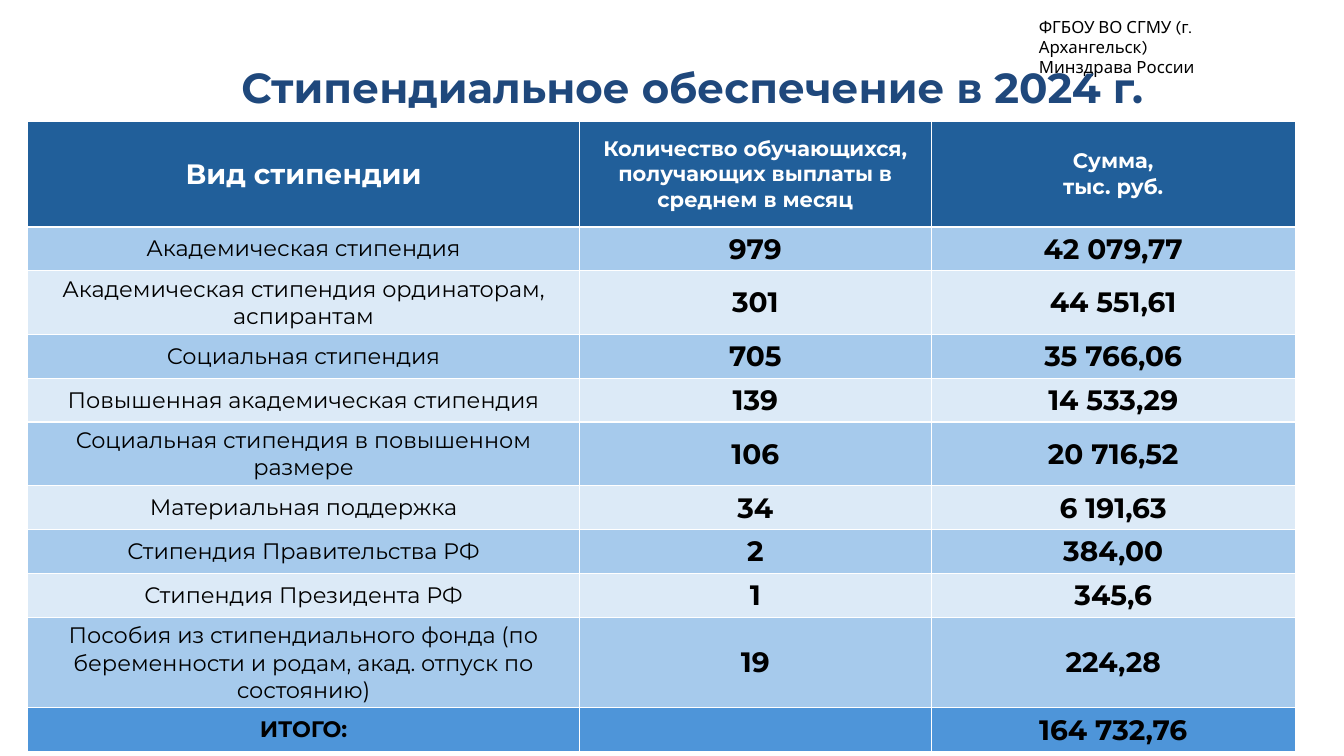
from pptx import Presentation
from pptx.dml.color import RGBColor
from pptx.enum.text import MSO_ANCHOR, PP_ALIGN
from pptx.util import Cm, Pt

LEFT = PP_ALIGN.LEFT
CENTER = PP_ALIGN.CENTER
MIDDLE = MSO_ANCHOR.MIDDLE

HEADINGS = [
    "Вид стипендии",
    "Количество обучающихся, получающих выплаты в среднем в месяц",
    "Сумма,\nтыс. руб.",
]
HEADING_SIZES = [20, 15, 15]
SCHOLARSHIPS = [
    ("Академическая стипендия", "979", "42 079,77"),
    ("Академическая стипендия ординаторам, аспирантам", "301", "44 551,61"),
    ("Социальная стипендия", "705", "35 766,06"),
    ("Повышенная академическая стипендия", "139", "14 533,29"),
    ("Социальная стипендия в повышенном размере", "106", "20 716,52"),
    ("Материальная поддержка", "34", "6 191,63"),
    ("Стипендия Правительства РФ", "2", "384,00"),
    ("Стипендия Президента РФ", "1", "345,6"),
    ("Пособия из стипендиального фонда (по беременности и родам, "
     "акад. отпуск по состоянию)", "19", "224,28"),
]
TOTAL = ("ИТОГО:", "", "164 732,76")

COLUMN_WIDTHS = [13.9, 8.87, 9.17]
HEADING_HEIGHT = 2.67
LINE_HEIGHTS = {1: 1.04, 2: 1.55, 3: 2.18}
LINE_COUNTS = [1, 2, 1, 1, 2, 1, 1, 1, 3, 1]
BANDS = ["A6CAEC", "DCEAF7"]


def color(value):
    return RGBColor.from_string(value)


def write(frame, text, size, font="Montserrat", fill="000000", bold=False,
          align=CENTER, spacing=None):
    frame.text = text
    for paragraph in frame.paragraphs:
        paragraph.alignment = align
        paragraph.line_spacing = spacing
        paragraph.font.size = Pt(size)
        for run in paragraph.runs:
            run.font.name = font
            run.font.size = Pt(size)
            run.font.bold = bold
            run.font.color.rgb = color(fill)


def add_text(slide, text, left, top, width, height, inset=None, **style):
    frame = slide.shapes.add_textbox(
        Cm(left), Cm(top), Cm(width), Cm(height)).text_frame
    frame.word_wrap = True
    if inset is not None:
        frame.margin_left = frame.margin_right = Cm(inset)
        frame.margin_top = frame.margin_bottom = Cm(inset)
    write(frame, text, **style)


def fill_cell(cell, text, background, **style):
    cell.fill.solid()
    cell.fill.fore_color.rgb = color(background)
    cell.vertical_anchor = MIDDLE
    write(cell.text_frame, text, **style)


def fill_row(table, row, texts, background, sizes=(16, 20, 20),
             bolds=(False, True, True), fill="000000"):
    for column, text in enumerate(texts):
        fill_cell(table.cell(row, column), text, background,
                  size=sizes[column], bold=bolds[column], fill=fill)


def add_scholarship_table(slide):
    heights = [HEADING_HEIGHT] + [LINE_HEIGHTS[n] for n in LINE_COUNTS]
    table = slide.shapes.add_table(
        len(heights), len(COLUMN_WIDTHS), Cm(0.7), Cm(3.05),
        Cm(sum(COLUMN_WIDTHS)), Cm(sum(heights))).table
    for column, width in zip(table.columns, COLUMN_WIDTHS):
        column.width = Cm(width)
    for row, height in zip(table.rows, heights):
        row.height = Cm(height)

    all_bold = (True, True, True)
    fill_row(table, 0, HEADINGS, "215F9A", HEADING_SIZES, all_bold, "FFFFFF")
    for index, scholarship in enumerate(SCHOLARSHIPS):
        fill_row(table, index + 1, scholarship, BANDS[index % 2])
    fill_row(table, len(heights) - 1, TOTAL, "4E95D9", bolds=all_bold)


def main():
    deck = Presentation()
    deck.slide_width, deck.slide_height = Cm(33.87), Cm(19.05)
    slide = deck.slides.add_slide(deck.slide_layouts[6])
    add_text(slide, "ФГБОУ ВО СГМУ (г. Архангельск)\nМинздрава России",
             25.93, 0.3, 6, 1.27, size=12, font="Karla", align=LEFT)
    add_text(slide, "Стипендиальное обеспечение в 2024 г.",
             1.04, 1.7, 32.82, 1.35, inset=0, size=30, fill="1F487C",
             bold=True, spacing=0.9)
    add_scholarship_table(slide)
    deck.save("out.pptx")


if __name__ == "__main__":
    main()
